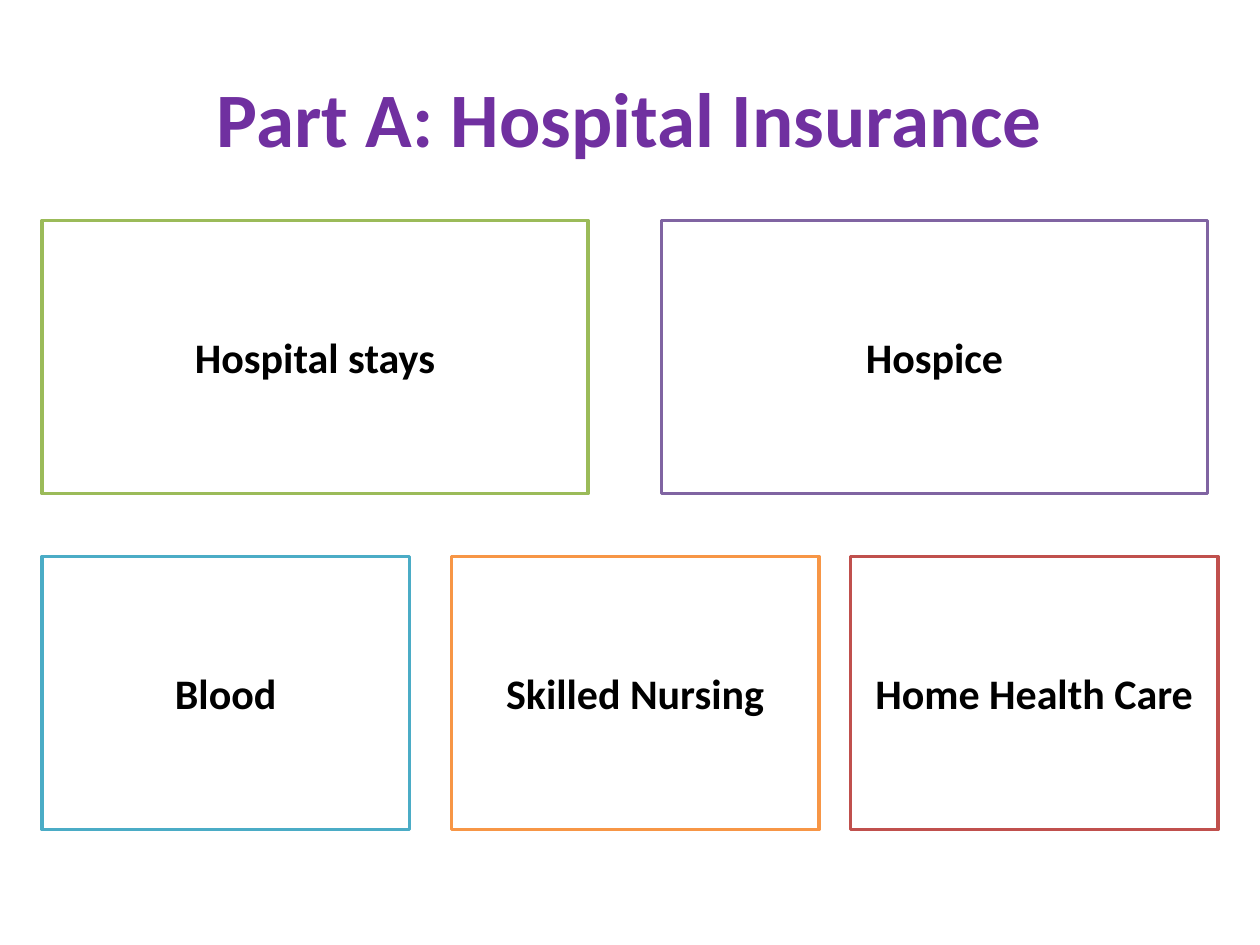
import pptx
import pptx.dml.color
import pptx.enum.shapes
import pptx.enum.text
import pptx.util

PX = 7620  # EMU per px, 120 px to the inch
COLORS = {
    "white": "FFFFFF",
    "black": "000000",
    "title": "7030A0",
    "green": "9BBB59",
    "purple": "8064A2",
    "blue": "4BACC6",
    "orange": "F79646",
    "red": "C0504D",
}


def rgb(name):
    return pptx.dml.color.RGBColor.from_string(COLORS[name])


def write_text(shape, text, size=24, color="black"):
    """Put one bold, centred line of text in the middle of the shape."""
    frame = shape.text_frame
    frame.word_wrap = True
    frame.vertical_anchor = pptx.enum.text.MSO_ANCHOR.MIDDLE
    paragraph = frame.paragraphs[0]
    paragraph.alignment = pptx.enum.text.PP_ALIGN.CENTER
    run = paragraph.add_run()
    run.text = text
    run.font.name = "Calibri"
    run.font.size = pptx.util.Pt(size)
    run.font.bold = True
    run.font.color.rgb = rgb(color)


presentation = pptx.Presentation()
presentation.slide_width = 1200 * PX
presentation.slide_height = 900 * PX
slide = presentation.slides.add_slide(presentation.slide_layouts[6])

title = slide.shapes.add_textbox(60 * PX, 36 * PX, 1080 * PX, 150 * PX)
write_text(title, "Part A: Hospital Insurance", size=44, color="title")

BOX_HEIGHT = 260
# Each row: top, box width, then left edge, label and outline of every box
rows = [
    (210, 520, [(40, "Hospital stays", "green"), (630, "Hospice", "purple")]),
    (530, 350, [(40, "Blood", "blue"), (430, "Skilled Nursing", "orange"),
                (810, "Home Health Care", "red")]),
]
for top, width, boxes in rows:
    for left, label, outline in boxes:
        box = slide.shapes.add_shape(
            pptx.enum.shapes.MSO_SHAPE.RECTANGLE,
            left * PX, top * PX, width * PX, BOX_HEIGHT * PX)
        box.shadow.inherit = False
        box.fill.solid()
        box.fill.fore_color.rgb = rgb("white")
        box.line.color.rgb = rgb(outline)
        box.line.width = pptx.util.Pt(2)
        write_text(box, label)

presentation.save("out.pptx")
